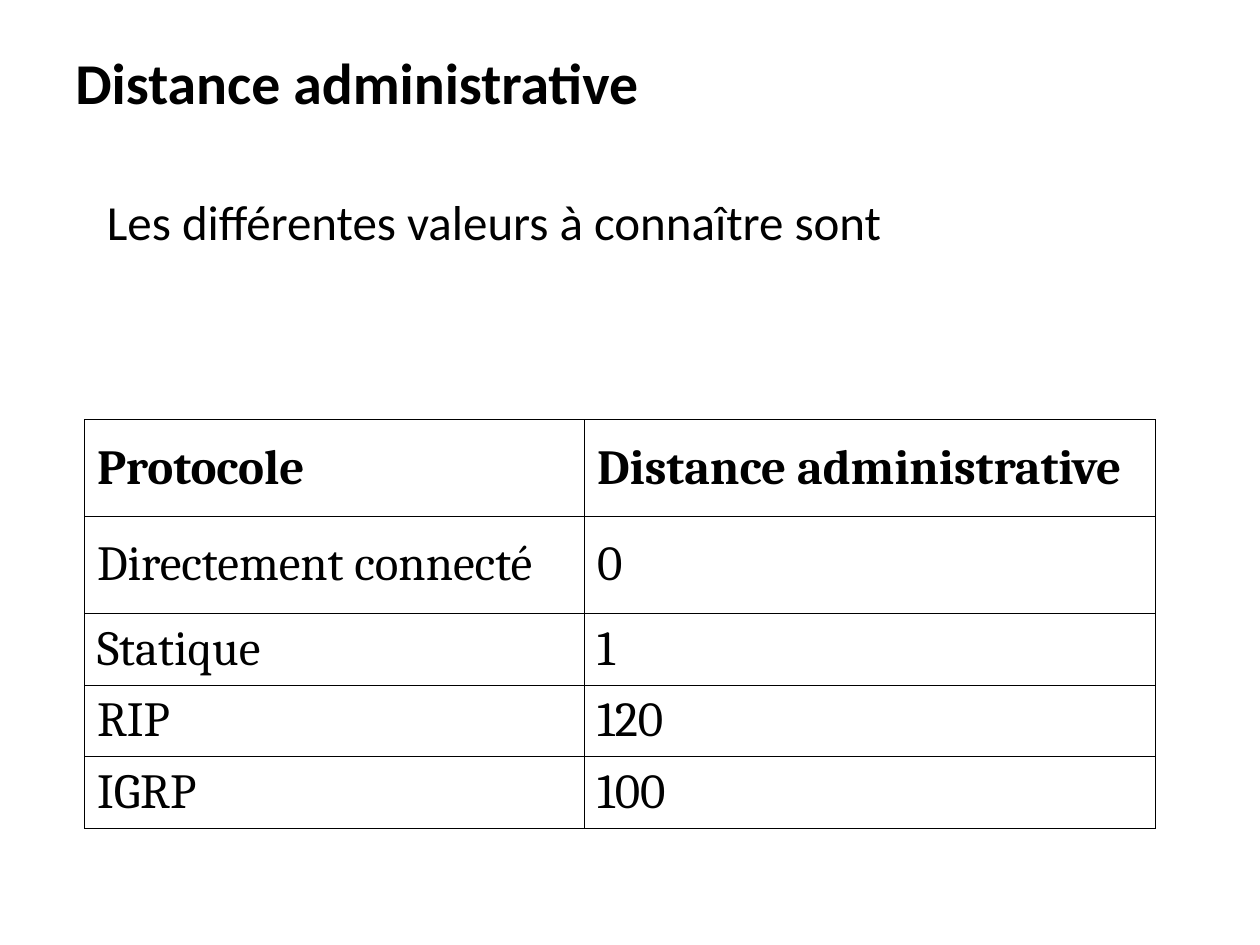
"""Build a slide listing the administrative distance of routing protocols."""
from dataclasses import dataclass

from lxml.etree import SubElement
from pptx import Presentation
from pptx.dml.color import RGBColor
from pptx.enum.text import MSO_ANCHOR
from pptx.oxml.ns import qn
from pptx.util import Inches, Pt


@dataclass(frozen=True)
class Theme:
    ink: str = "000000"
    heading_font: str = "Calibri"
    table_font: str = "Cambria"
    title_size: int = 33
    body_size: int = 28
    border_width: float = 0.5


THEME = Theme()
DISTANCES = [
    ("Protocole", "Distance administrative"),
    ("Directement connecté", "0"),
    ("Statique", "1"),
    ("RIP", "120"),
    ("IGRP", "100"),
]
COLUMN_WIDTHS = (3.97, 4.53)
ROW_HEIGHTS = (0.77, 0.77, 0.47, 0.47, 0.47)


def write(frame, wording, font_name, size, bold=False):
    frame.text = wording
    for run in frame.paragraphs[0].runs:
        run.font.name = font_name
        run.font.size = Pt(size)
        run.font.bold = bold
        run.font.color.rgb = RGBColor.from_string(THEME.ink)


def add_text(slide, wording, left, top, width, height, size,
             bold=False, anchor=MSO_ANCHOR.TOP):
    box = slide.shapes.add_textbox(
        Inches(left), Inches(top), Inches(width), Inches(height))
    frame = box.text_frame
    frame.word_wrap = True
    frame.vertical_anchor = anchor
    write(frame, wording, THEME.heading_font, size, bold)
    return frame.paragraphs[0]


def outline(cell):
    properties = cell._tc.get_or_add_tcPr()
    for position, side in enumerate(("a:lnL", "a:lnR", "a:lnT", "a:lnB")):
        line = SubElement(properties, qn(side), w=str(Pt(THEME.border_width)))
        fill = SubElement(line, qn("a:solidFill"))
        SubElement(fill, qn("a:srgbClr"), val=THEME.ink)
        properties.insert(position, line)


def add_distance_table(slide, left, top):
    table = slide.shapes.add_table(
        len(DISTANCES), len(COLUMN_WIDTHS), Inches(left), Inches(top),
        Inches(sum(COLUMN_WIDTHS)), Inches(sum(ROW_HEIGHTS))).table
    table.horz_banding = False
    for column, width in zip(table.columns, COLUMN_WIDTHS):
        column.width = Inches(width)
    for row, height, entries in zip(table.rows, ROW_HEIGHTS, DISTANCES):
        row.height = Inches(height)
        for cell, entry in zip(row.cells, entries):
            write(cell.text_frame, entry, THEME.table_font, THEME.body_size,
                  bold=entries is DISTANCES[0])
            cell.vertical_anchor = MSO_ANCHOR.MIDDLE
            cell.fill.background()
            outline(cell)


def main():
    presentation = Presentation()
    presentation.slide_width = Inches(10)
    presentation.slide_height = Inches(7.5)
    slide = presentation.slides.add_slide(presentation.slide_layouts[6])
    title = add_text(slide, "Distance administrative", 0.5, 0.21, 9, 0.94,
                     THEME.title_size, bold=True, anchor=MSO_ANCHOR.MIDDLE)
    title.line_spacing = 0.9
    add_distance_table(slide, 0.67, 3.33)
    add_text(slide, "Les différentes valeurs à connaître sont",
             0.75, 1.47, 7.68, 1.04, THEME.body_size)
    presentation.save("out.pptx")


if __name__ == "__main__":
    main()
